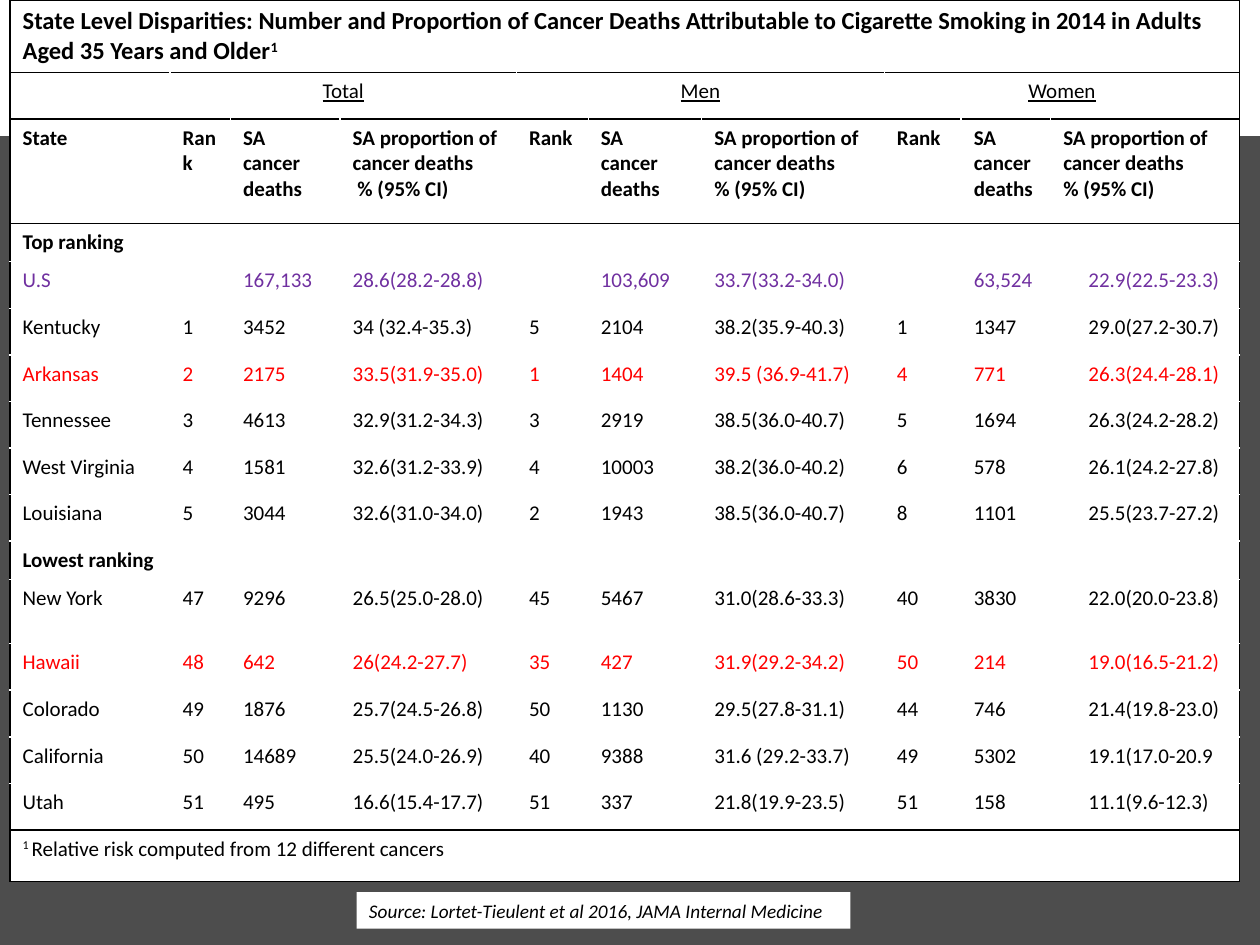
"""Build a slide with a table of cancer deaths due to smoking by state."""
from lxml.etree import SubElement
from pptx import Presentation
from pptx.dml.color import RGBColor
from pptx.enum.shapes import MSO_SHAPE as SHAPE
from pptx.enum.text import MSO_AUTO_SIZE as AUTO, PP_ALIGN as ALIGN
from pptx.oxml.ns import qn
from pptx.util import Inches, Pt

BLACK = RGBColor(0x00, 0x00, 0x00)
WHITE = RGBColor(0xFF, 0xFF, 0xFF)
GRAY = RGBColor(0x4D, 0x4D, 0x4D)
RED = RGBColor(0xFF, 0x00, 0x00)
PURPLE = RGBColor(0x70, 0x30, 0xA0)
FACE = "Calibri"

TITLE = ("State Level Disparities: Number and Proportion of Cancer Deaths "
         "Attributable to Cigarette Smoking in 2014 in Adults Aged 35 Years and Older")
NOTE = "Relative risk computed from 12 different cancers"
SOURCE = "Source: Lortet-Tieulent et al 2016, JAMA Internal Medicine"
GROUPS = ["", "Total", "Men", "Women"]
DEATHS = "SA\ncancer deaths"
SHARE = "SA proportion of cancer deaths\n% (95% CI)"
HEADS = ["State", "Rank", DEATHS, SHARE.replace("\n", "\n "),
         "Rank", DEATHS, SHARE, "Rank", DEATHS, SHARE]
TOP = [
    ("U.S", "", "167,133", "28.6(28.2-28.8)", "", "103,609", "33.7(33.2-34.0)",
     "", "63,524", "22.9(22.5-23.3)"),
    ("Kentucky", "1", "3452", "34 (32.4-35.3)", "5", "2104", "38.2(35.9-40.3)",
     "1", "1347", "29.0(27.2-30.7)"),
    ("Arkansas", "2", "2175", "33.5(31.9-35.0)", "1", "1404", "39.5 (36.9-41.7)",
     "4", "771", "26.3(24.4-28.1)"),
    ("Tennessee", "3", "4613", "32.9(31.2-34.3)", "3", "2919", "38.5(36.0-40.7)",
     "5", "1694", "26.3(24.2-28.2)"),
    ("West Virginia", "4", "1581", "32.6(31.2-33.9)", "4", "10003", "38.2(36.0-40.2)",
     "6", "578", "26.1(24.2-27.8)"),
    ("Louisiana", "5", "3044", "32.6(31.0-34.0)", "2", "1943", "38.5(36.0-40.7)",
     "8", "1101", "25.5(23.7-27.2)"),
]
LOW = [
    ("New York", "47", "9296", "26.5(25.0-28.0)", "45", "5467", "31.0(28.6-33.3)",
     "40", "3830", "22.0(20.0-23.8)"),
    ("Hawaii", "48", "642", "26(24.2-27.7)", "35", "427", "31.9(29.2-34.2)",
     "50", "214", "19.0(16.5-21.2)"),
    ("Colorado", "49", "1876", "25.7(24.5-26.8)", "50", "1130", "29.5(27.8-31.1)",
     "44", "746", "21.4(19.8-23.0)"),
    ("California", "50", "14689", "25.5(24.0-26.9)", "40", "9388", "31.6 (29.2-33.7)",
     "49", "5302", "19.1(17.0-20.9"),
    ("Utah", "51", "495", "16.6(15.4-17.7)", "51", "337", "21.8(19.9-23.5)",
     "51", "158", "11.1(9.6-12.3)"),
]
TINTS = {"U.S": PURPLE, "Arkansas": RED, "Hawaii": RED}
WIDTHS = [1.27, 0.48, 0.87, 1.4, 0.57, 0.9, 1.45, 0.61, 0.71, 0.2, 1.3]
HEIGHTS = [0.57, 0.37, 0.83, 0.3] + [0.37] * 6 + [0.3, 0.51] + [0.37] * 4 + [0.41]
RULED = {0, 1, 2, 3, 16, 17}

FULL, BODY = [11], [1] * 8 + [2, 1]
ROWS = [
    (FULL, [TITLE], {"bold": True, "size": 14}),
    ([1, 3, 3, 4], GROUPS, {"under": True, "align": ALIGN.CENTER}),
    ([1] * 9 + [2], HEADS, {"bold": True}),
    (FULL, ["Top ranking"], {"bold": True}),
    *[(BODY, row, {"tint": TINTS.get(row[0], BLACK)}) for row in TOP],
    (FULL, ["Lowest ranking"], {"bold": True}),
    *[(BODY, row, {"tint": TINTS.get(row[0], BLACK)}) for row in LOW],
    (FULL, [""], {}),
]


def set_font(font, size=12, tint=BLACK, bold=False, under=False, italic=False):
    font.name, font.size = FACE, Pt(size)
    font.bold, font.italic, font.underline = bold, italic, under
    font.color.rgb = tint


def write(cell, text, align=ALIGN.LEFT, **style):
    cell.text = text
    for para in cell.text_frame.paragraphs:
        para.alignment = align
        set_font(para.font, **style)
        if not text:
            para._p.get_or_add_endParaRPr().set("sz", "1200")


def add_run(para, text, raised=False):
    run = para.add_run()
    run.text = text
    if raised:
        run._r.get_or_add_rPr().set("baseline", "30000")


def edge(cell, **tints):
    props = cell._tc.get_or_add_tcPr()
    for spot, (side, tint) in enumerate(tints.items()):
        line = SubElement(props, qn(f"a:ln{side}"), w=str(Pt(1)))
        props.insert(spot, line)
        fill = SubElement(line, qn("a:solidFill"))
        SubElement(fill, qn("a:srgbClr"), val=str(tint))


def ink(dark):
    return BLACK if dark else WHITE


def add_box(slide, x, y, w, h, tint):
    box = slide.shapes.add_shape(SHAPE.RECTANGLE, *map(Inches, (x, y, w, h)))
    box.shadow.inherit = False
    box.fill.solid()
    box.fill.fore_color.rgb = tint
    box.line.fill.background()
    return box


def add_grid(slide):
    frame = slide.shapes.add_table(len(HEIGHTS), len(WIDTHS), Inches(0.08), 0,
                                   Inches(sum(WIDTHS)), Inches(sum(HEIGHTS)))
    grid = frame.table
    grid.first_row = grid.horz_banding = False
    for col, width in zip(grid.columns, WIDTHS):
        col.width = Inches(width)
    for row, height in zip(grid.rows, HEIGHTS):
        row.height = Inches(height)
    for r, (spans, texts, style) in enumerate(ROWS):
        c = 0
        for span, text in zip(spans, texts):
            cell, end = grid.cell(r, c), c + span
            if span > 1:
                cell.merge(grid.cell(r, end - 1))
            write(cell, text, **style)
            cell.fill.solid()
            cell.fill.fore_color.rgb = WHITE
            edge(cell, L=ink(c == 0), R=ink(end == len(WIDTHS)),
                 T=ink(r in RULED), B=ink(r + 1 in RULED))
            c = end
    add_run(grid.cell(0, 0).text_frame.paragraphs[0], "1", raised=True)
    note = grid.cell(len(ROWS) - 1, 0).text_frame.paragraphs[0]
    add_run(note, "1 ", raised=True)
    add_run(note, NOTE)


def main():
    deck = Presentation()
    deck.slide_width, deck.slide_height = Inches(10), Inches(7.5)
    slide = deck.slides.add_slide(deck.slide_layouts[6])
    add_box(slide, 0, 1.08, 10, 6.42, GRAY)
    add_grid(slide)
    frame = add_box(slide, 2.83, 7.08, 3.92, 0.29, WHITE).text_frame
    frame.word_wrap, frame.auto_size = True, AUTO.SHAPE_TO_FIT_TEXT
    para = frame.paragraphs[0]
    para.text, para.alignment = SOURCE, ALIGN.LEFT
    set_font(para.font, size=11, italic=True)
    deck.save("out.pptx")


if __name__ == "__main__":
    main()
